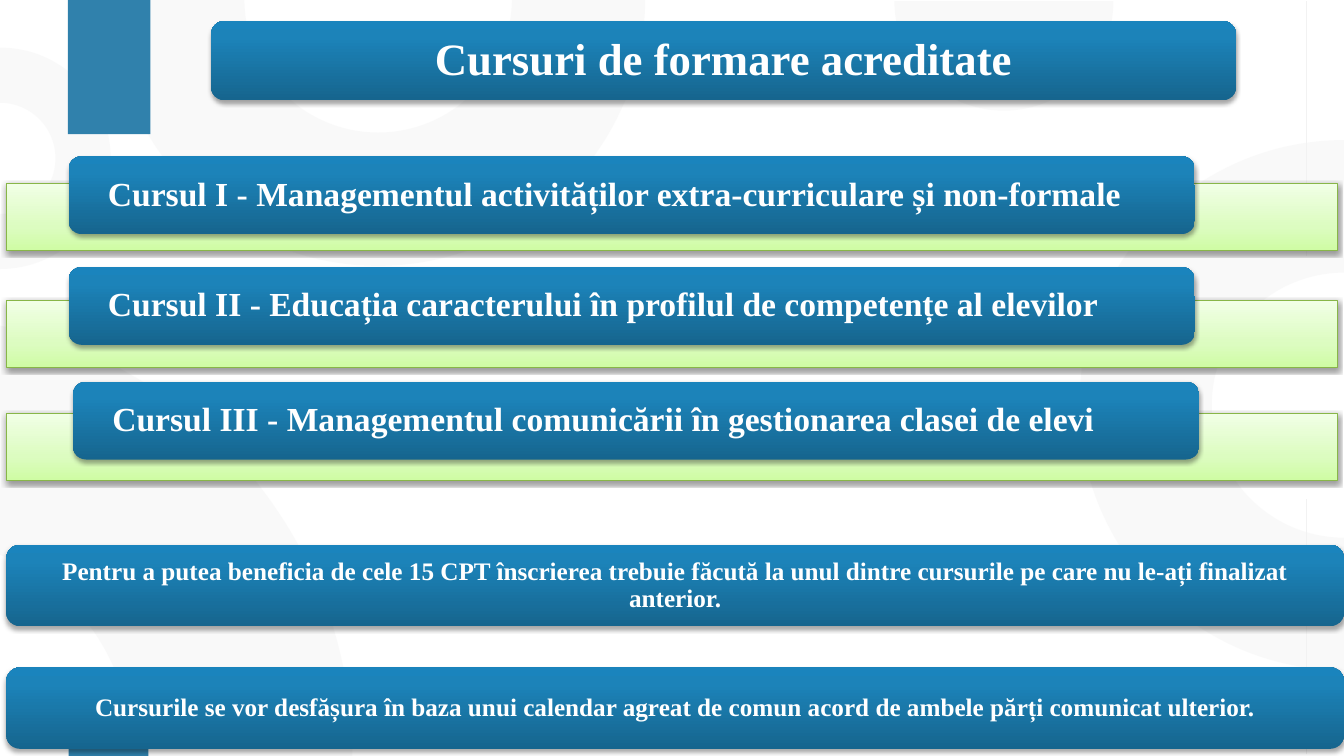
from dataclasses import dataclass
from math import ceil, cos, radians, sin, tan

from lxml import etree
from pptx import Presentation
from pptx.dml.color import RGBColor
from pptx.enum.shapes import MSO_CONNECTOR, MSO_SHAPE
from pptx.enum.text import MSO_ANCHOR, MSO_AUTO_SIZE, PP_ALIGN
from pptx.oxml.ns import qn
from pptx.util import Cm, Pt

RECT, ROUNDED = MSO_SHAPE.RECTANGLE, MSO_SHAPE.ROUNDED_RECTANGLE
STRAIGHT = MSO_CONNECTOR.STRAIGHT
LEFT, CENTER = PP_ALIGN.LEFT, PP_ALIGN.CENTER
MIDDLE = MSO_ANCHOR.MIDDLE
NO_AUTOFIT = MSO_AUTO_SIZE.NONE
TEXT_GAP = 0.1  # between the edge of a panel and its text box, cm


@dataclass(frozen=True)
class Theme:
    font: str = "Times New Roman"
    text: str = "FFFFFF"
    backdrop: str = "F2F2F2"
    strip: str = "3081AC"
    bar_line: str = "88B648"
    shadow: str = "000000"
    blue: tuple = ((0, "16658E"), (80, "1C83B9"), (100, "1A84BD"))
    green: tuple = ((0, "CFFCA4"), (35, "DCFCC0"), (100, "F1FFE6"))
    title_size: int = 32
    course_size: int = 24
    note_size: int = 18


def rgb(color):
    return RGBColor.from_string(color)


def add_node(parent, tag, **attributes):
    values = {name: str(value) for name, value in attributes.items()}
    return etree.SubElement(parent, qn(tag), values)


def write(tf, text, *, font, size, color, align=CENTER, inset_x=0.18, inset_y=0.18):
    tf.word_wrap = True
    tf.auto_size = NO_AUTOFIT
    tf.vertical_anchor = MIDDLE
    tf.margin_left = tf.margin_right = Cm(inset_x)
    tf.margin_top = tf.margin_bottom = Cm(inset_y)
    p = tf.paragraphs[0]
    p.alignment = align
    p.line_spacing = 0.9
    r = p.add_run()
    r.text = text
    r.font.name = font
    r.font.size = Pt(size)
    r.font.bold = True
    r.font.color.rgb = rgb(color)


def arc(x, y, radius, start, end):
    """Start point and Bézier segments of a circular arc; degrees, clockwise from the right."""
    count = ceil(abs(end - start) / 90)
    step = radians(end - start) / count
    pull = 4 / 3 * tan(step / 4)

    def point(angle, tangent=0):
        return (Cm(x + radius * (cos(angle) - tangent * sin(angle))),
                Cm(y + radius * (sin(angle) + tangent * cos(angle))))

    angles = [radians(start) + step * i for i in range(count + 1)]
    curves = [(point(a, pull), point(b, -pull), point(b))
              for a, b in zip(angles, angles[1:])]
    return point(angles[0]), curves


class SlideBuilder:
    def __init__(self, slide, theme):
        self.slide = slide
        self.shapes = slide.shapes
        self.theme = theme

    def _solid(self, s, color):
        s.shadow.inherit = False
        s.fill.solid()
        s.fill.fore_color.rgb = rgb(color)
        s.line.fill.background()

    def _glossy(self, s, stops, shadow_alpha, distance):
        """Vertical gradient from the bottom up, with a soft shadow below."""
        s.fill.gradient()
        s.fill.gradient_angle = 90
        stop_list = s.element.spPr.find(".//" + qn("a:gsLst"))
        for old in list(stop_list):
            stop_list.remove(old)
        for position, color in stops:
            stop = add_node(stop_list, "a:gs", pos=position * 1000)
            add_node(stop, "a:srgbClr", val=color)
        s.line.fill.background()
        s.shadow.inherit = False
        effects = s.element.spPr.find(qn("a:effectLst"))
        shadow = add_node(effects, "a:outerShdw", blurRad=Pt(3.1), dist=Pt(distance),
                          dir=5400000, rotWithShape=0)
        color = add_node(shadow, "a:srgbClr", val=self.theme.shadow)
        add_node(color, "a:alpha", val=shadow_alpha * 1000)

    def ring(self, x, y, outer, inner, start, end, inner_start=None):
        """Part of a pale ring, or of a disc when the inner radius is zero."""
        first, segments = arc(x, y, outer, start, end)
        if inner:
            inner_start = start if inner_start is None else inner_start
            corner, curves = arc(x, y, inner, end, inner_start)
            segments += [(corner,)] + curves
        builder = self.shapes.build_freeform(*first)
        builder.add_line_segments([segment[-1] for segment in segments], close=True)
        s = builder.convert_to_shape()
        lines = list(s.element.spPr.iter(qn("a:lnTo")))
        for line, segment in zip(lines, segments):
            if len(segment) == 3:
                curve = etree.Element(qn("a:cubicBezTo"))
                for px, py in segment:
                    add_node(curve, "a:pt", x=px - s.left, y=py - s.top)
                line.getparent().replace(line, curve)
        self._solid(s, self.theme.backdrop)
        color = s.element.spPr.find(".//" + qn("a:srgbClr"))
        add_node(color, "a:alpha", val=40000)

    def strip(self, *box):
        s = self.shapes.add_shape(RECT, *map(Cm, box))
        self._solid(s, self.theme.strip)

    def rule(self, x, top, bottom):
        line = self.shapes.add_connector(STRAIGHT, Cm(x), Cm(bottom), Cm(x), Cm(top))
        line.line.color.rgb = rgb(self.theme.backdrop)
        line.line.width = Pt(0.75)
        add_node(line.element.spPr, "a:effectLst")

    def bar(self, *box):
        s = self.shapes.add_shape(RECT, *map(Cm, box))
        self._glossy(s, self.theme.green, 38, 1.6)
        s.line.color.rgb = rgb(self.theme.bar_line)
        s.line.width = Pt(0.75)

    def panel(self, text, left, top, width, height, *, size, title=False, **text_format):
        """Blue rounded panel with its text, which can be the slide title."""
        s = self.shapes.add_shape(ROUNDED, *map(Cm, (left, top, width, height)))
        self._glossy(s, self.theme.blue, 35, 1.8)
        box = [Cm(v) for v in (left + TEXT_GAP, top + TEXT_GAP,
                               width - 2 * TEXT_GAP, height - 2 * TEXT_GAP)]
        if title:
            label = self.shapes.title
            label.left, label.top, label.width, label.height = box
            s.element.addnext(label.element)  # bring in front of the panel
        else:
            label = self.shapes.add_textbox(*box)
        write(label.text_frame, text, font=self.theme.font, size=size,
              color=self.theme.text, **text_format)


RINGS = [
    (25.3, 0.03, 2.76, 0, 0, 180),
    (-2.18, 19.05, 11.06, 5.52, -78.6, 0, -66.7),
    (9.53, -0.03, 6.73, 3.37, 0, 180),
    (0, 3.99, 2.79, 1.4, -90, 90),
    (33.88, 10.21, 6.68, 3.34, 90, 270),
]
# text, bar top, panel left, panel top
COURSES = [
    ("Cursul I - Managementul activităților extra-curriculare și non-formale",
     4.62, 1.73, 3.94),
    ("Cursul II - Educația caracterului în profilul de competențe al elevilor",
     7.57, 1.73, 6.73),
    ("Cursul III - Managementul comunicării în gestionarea clasei de elevi",
     10.41, 1.84, 9.62),
]
NOTES = [
    ("Pentru a putea beneficia de cele 15 CPT înscrierea trebuie făcută la unul "
     "dintre cursurile pe care nu le-ați finalizat anterior.", 13.73),
    ("Cursurile se vor desfășura în baza unui calendar agreat de comun acord de "
     "ambele părți comunicat ulterior.", 16.82),
]


def main():
    prs = Presentation()
    prs.slide_width, prs.slide_height = Cm(33.87), Cm(19.05)
    theme = Theme()
    page = SlideBuilder(prs.slides.add_slide(prs.slide_layouts[5]), theme)

    for ring in RINGS:
        page.ring(*ring)
    page.strip(1.71, 0, 2.08, 3.38)
    page.strip(1.73, 18.16, 2.01, 0.89)
    page.rule(32.93, 0.03, 6.45)
    page.rule(32.93, 12.57, 19)

    for text, bar_top, left, top in COURSES:
        page.bar(0.16, bar_top, 33.54, 1.69)
        page.panel(text, left, top, 28.38, 1.96, size=theme.course_size,
                   align=LEFT, inset_x=0.89, inset_y=0)
    page.panel("Cursuri de formare acreditate", 5.32, 0.53, 25.83, 2,
               size=theme.title_size, title=True)
    for text, top in NOTES:
        page.panel(text, 0.16, top, 33.71, 2.05, size=theme.note_size)

    prs.save("out.pptx")


if __name__ == "__main__":
    main()
